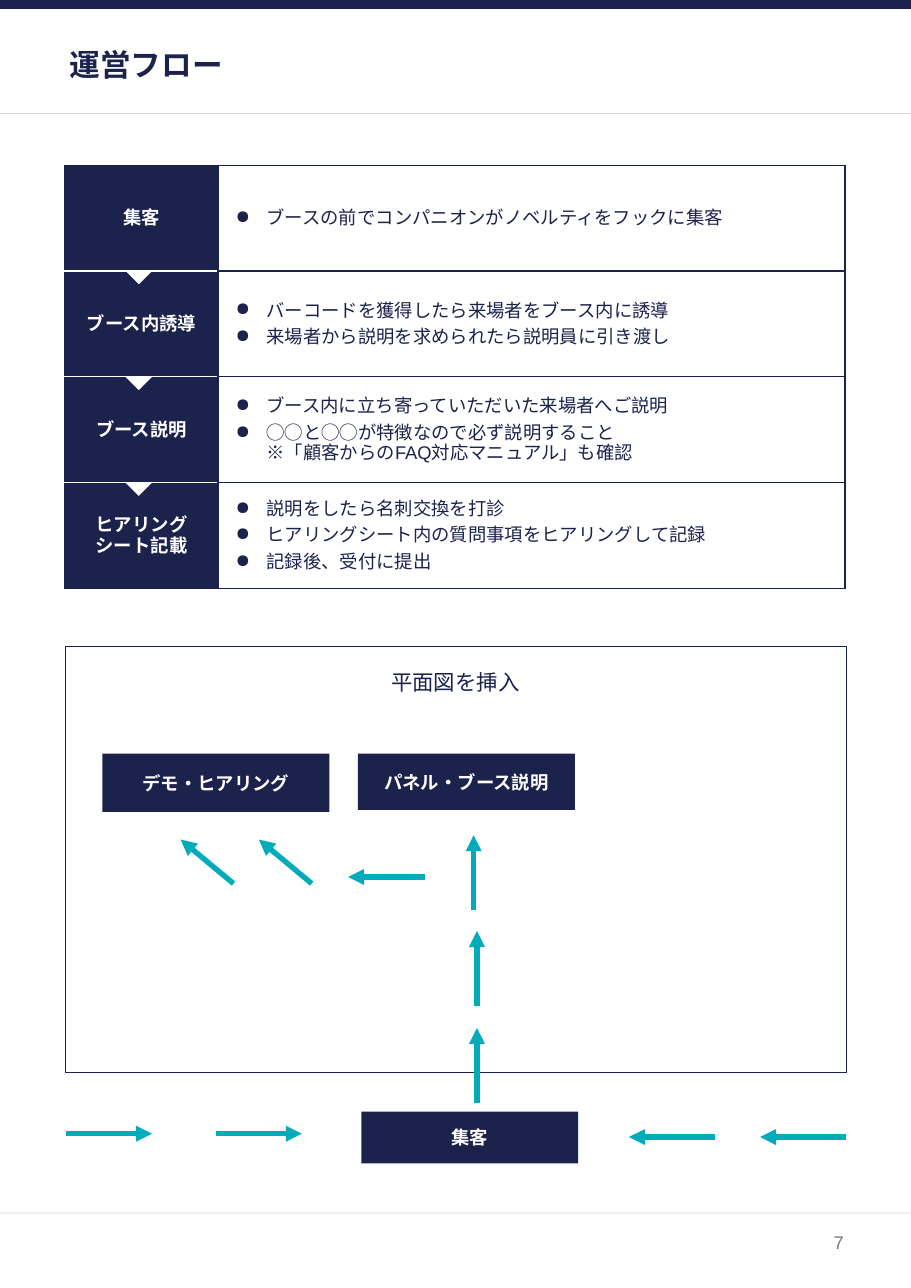
from copy import deepcopy
from dataclasses import dataclass

from lxml import etree
from pptx import Presentation
from pptx.dml.color import RGBColor
from pptx.enum.shapes import MSO_CONNECTOR, MSO_SHAPE
from pptx.enum.text import MSO_ANCHOR, MSO_AUTO_SIZE, PP_ALIGN
from pptx.oxml.ns import qn
from pptx.util import Inches, Pt

RECTANGLE, TRIANGLE = MSO_SHAPE.RECTANGLE, MSO_SHAPE.ISOSCELES_TRIANGLE
STRAIGHT = MSO_CONNECTOR.STRAIGHT
TOP, MIDDLE = MSO_ANCHOR.TOP, MSO_ANCHOR.MIDDLE
LEFT, CENTER, RIGHT = PP_ALIGN.LEFT, PP_ALIGN.CENTER, PP_ALIGN.RIGHT
NO_AUTOFIT = MSO_AUTO_SIZE.NONE


@dataclass(frozen=True)
class Theme:
    font: str = "Arial"
    navy: str = "1B224C"
    teal: str = "00ACBA"
    white: str = "FFFFFF"
    gray: str = "7A7B87"
    rule: str = "D8D8D8"
    pale_rule: str = "F2F2F2"
    title: int = 20
    heading: int = 14
    body: int = 12


@dataclass(frozen=True)
class Step:
    label: list[str]
    details: list[str]


@dataclass(frozen=True)
class Area:
    text: str
    box: tuple[float, float, float, float]


@dataclass(frozen=True)
class ArrowGroup:
    """Arrows with one direction and length."""
    dx: float
    dy: float
    starts: list[tuple[float, float]]


THEME = Theme()
SLIDE_WIDTH, SLIDE_HEIGHT = 8.27, 11.69
MARGIN, CONTENT_WIDTH = 0.59, 7.09
TABLE_TOP, ROW_HEIGHT = 1.5, 0.96
COLUMN_WIDTHS = (1.39, 5.69)
SMALL_INSETS = (0.04,) * 4

STEPS = [
    Step(["集客"], ["ブースの前でコンパニオンがノベルティをフックに集客"]),
    Step(["ブース内誘導"], ["バーコードを獲得したら来場者をブース内に誘導",
                     "来場者から説明を求められたら説明員に引き渡し"]),
    Step(["ブース説明"], ["ブース内に立ち寄っていただいた来場者へご説明",
                    "◯◯と◯◯が特徴なので必ず説明すること\n※「顧客からのFAQ対応マニュアル」も確認"]),
    Step(["ヒアリング", "シート記載"], ["説明をしたら名刺交換を打診",
                            "ヒアリングシート内の質問事項をヒアリングして記録",
                            "記録後、受付に提出"]),
]
AREAS = [
    Area("集客", (3.28, 10.09, 1.97, 0.47)),
    Area("パネル・ブース説明", (3.25, 6.84, 1.97, 0.51)),
    Area("デモ・ヒアリング", (0.93, 6.84, 2.06, 0.53)),
]
ARROWS = [
    ArrowGroup(-0.48, -0.4, [(2.83, 8.02), (2.12, 8.02)]),
    ArrowGroup(-0.7, 0, [(3.86, 7.96)]),
    ArrowGroup(0, -0.68, [(4.3, 8.26), (4.33, 9.13), (4.33, 10.01)]),
    ArrowGroup(0.78, 0, [(1.96, 10.29), (0.6, 10.29)]),
    ArrowGroup(-0.78, 0, [(7.68, 10.32), (6.49, 10.32)]),
]


def set_format(target, values: dict) -> None:
    for name, value in values.items():
        setattr(target, name, value)


def set_insets(target, insets: tuple) -> None:
    sides = ("margin_left", "margin_top", "margin_right", "margin_bottom")
    set_format(target, dict(zip(sides, map(Inches, insets))))


def add_bullet(paragraph) -> None:
    properties = paragraph._p.get_or_add_pPr()
    properties.set("marL", str(Inches(0.28)))
    properties.set("indent", str(-Inches(0.28)))
    color = etree.SubElement(properties, qn("a:buClr"))
    etree.SubElement(color, qn("a:srgbClr"), val=THEME.navy)
    etree.SubElement(properties, qn("a:buChar"), char="●")
    paragraph.space_after = Pt(4)


def write_text(frame, lines: list[str], size: int, color: str, bold: bool = False,
               alignment=CENTER, bulleted: bool = False) -> None:
    for index, line in enumerate(lines):
        paragraph = frame.add_paragraph() if index else frame.paragraphs[0]
        paragraph.text = line
        paragraph.alignment = alignment
        if bulleted:
            add_bullet(paragraph)
        for run in paragraph.runs:
            set_format(run.font, {"name": THEME.font, "size": Pt(size), "bold": bold})
            run.font.color.rgb = RGBColor.from_string(color)
            properties = run._r.get_or_add_rPr()
            etree.SubElement(properties, qn("a:ea"), typeface=THEME.font)
            for line_break in paragraph._p.findall(qn("a:br")):
                if not len(line_break):
                    line_break.append(deepcopy(properties))


def prepare_frame(frame, anchor, insets: tuple) -> None:
    set_format(frame, {"word_wrap": True, "auto_size": NO_AUTOFIT, "vertical_anchor": anchor})
    set_insets(frame, insets)


def add_block(slide, kind, box: tuple, fill: str | None = None, line: str | None = None):
    shape = slide.shapes.add_shape(kind, *map(Inches, box))
    shape.shadow.inherit = False
    for part, color in ((shape.fill, fill), (shape.line.fill, line)):
        if color:
            part.solid()
            part.fore_color.rgb = RGBColor.from_string(color)
        else:
            part.background()
    return shape


def add_line(slide, start: tuple, end: tuple, color: str, width: float, arrow: bool = False) -> None:
    connector = slide.shapes.add_connector(STRAIGHT, *map(Inches, (*start, *end)))
    connector.line.color.rgb = RGBColor.from_string(color)
    connector.line.width = Pt(width)
    if arrow:
        etree.SubElement(connector.line._ln, qn("a:tailEnd"), type="triangle")
    etree.SubElement(connector._element.spPr, qn("a:effectLst"))


def format_cell(cell, insets: tuple, fill: str | None, top: str, bottom: str) -> None:
    set_insets(cell, insets)
    cell.vertical_anchor = MIDDLE
    properties = cell._tc.get_or_add_tcPr()
    borders = {"a:lnL": THEME.navy, "a:lnR": THEME.navy, "a:lnT": top, "a:lnB": bottom}
    for tag, color in borders.items():
        border = etree.SubElement(properties, qn(tag), w=str(Pt(1)))
        solid = etree.SubElement(border, qn("a:solidFill"))
        etree.SubElement(solid, qn("a:srgbClr"), val=color)
    if fill:
        cell.fill.solid()
        cell.fill.fore_color.rgb = RGBColor.from_string(fill)
    else:
        cell.fill.background()


def add_step_table(slide) -> None:
    box = (MARGIN, TABLE_TOP, CONTENT_WIDTH, ROW_HEIGHT * len(STEPS))
    table = slide.shapes.add_table(len(STEPS), 2, *map(Inches, box)).table
    set_format(table, {"first_row": False, "horz_banding": False})
    for column, width in zip(table.columns, COLUMN_WIDTHS):
        column.width = Inches(width)
    for index, step in enumerate(STEPS):
        table.rows[index].height = Inches(ROW_HEIGHT)
        label, details = table.cell(index, 0), table.cell(index, 1)
        top = THEME.white if index else THEME.navy
        bottom = THEME.white if index < len(STEPS) - 1 else THEME.navy
        format_cell(label, (0.1,) * 4, THEME.navy, top, bottom)
        format_cell(details, (0.16, 0.12, 0.12, 0.12), None, THEME.navy, THEME.navy)
        write_text(label.text_frame, step.label, THEME.body, THEME.white, bold=True)
        write_text(details.text_frame, step.details, THEME.body, THEME.navy,
                   alignment=LEFT, bulleted=True)


def main() -> None:
    presentation = Presentation()
    presentation.slide_width = Inches(SLIDE_WIDTH)
    presentation.slide_height = Inches(SLIDE_HEIGHT)
    slide = presentation.slides.add_slide(presentation.slide_layouts[5])

    # Page frame
    add_block(slide, RECTANGLE, (0, 0, SLIDE_WIDTH, 0.08), THEME.navy)
    for y, color in ((11.01, THEME.pale_rule), (1.03, THEME.rule)):
        add_line(slide, (0, y), (SLIDE_WIDTH, y), color, 0.75)

    # Title and page number
    title = slide.shapes.title
    set_format(title, {"left": Inches(MARGIN), "top": Inches(0.35),
                       "width": Inches(CONTENT_WIDTH), "height": Inches(0.47)})
    prepare_frame(title.text_frame, MIDDLE, SMALL_INSETS)
    write_text(title.text_frame, ["運営フロー"], THEME.title, THEME.navy, bold=True, alignment=LEFT)
    number = slide.shapes.add_textbox(*map(Inches, (5.84, 11.12, 1.86, 0.31))).text_frame
    prepare_frame(number, MIDDLE, SMALL_INSETS)
    write_text(number, ["7"], THEME.body, THEME.gray, alignment=RIGHT)

    # Steps, with a marker between rows
    add_step_table(slide)
    for index in range(1, len(STEPS)):
        marker_top = TABLE_TOP + index * ROW_HEIGHT
        marker = add_block(slide, TRIANGLE, (1.14, marker_top, 0.24, 0.12), THEME.white)
        marker.rotation = 180

    # Floor plan
    for area in AREAS:
        frame = add_block(slide, RECTANGLE, area.box, THEME.navy).text_frame
        prepare_frame(frame, MIDDLE, (0.1, 0.05, 0.1, 0.05))
        write_text(frame, [area.text], THEME.body, THEME.white, bold=True)
    plan = add_block(slide, RECTANGLE, (MARGIN, 5.87, CONTENT_WIDTH, 3.86), line=THEME.navy)
    plan.line.width = Pt(0.5)
    prepare_frame(plan.text_frame, TOP, (0.1, 0.2, 0.1, 0.1))
    write_text(plan.text_frame, ["平面図を挿入"], THEME.heading, THEME.navy)

    # Visitor route
    for group in ARROWS:
        for x, y in group.starts:
            add_line(slide, (x, y), (x + group.dx, y + group.dy), THEME.teal, 3.5, arrow=True)

    presentation.save("out.pptx")


if __name__ == "__main__":
    main()
